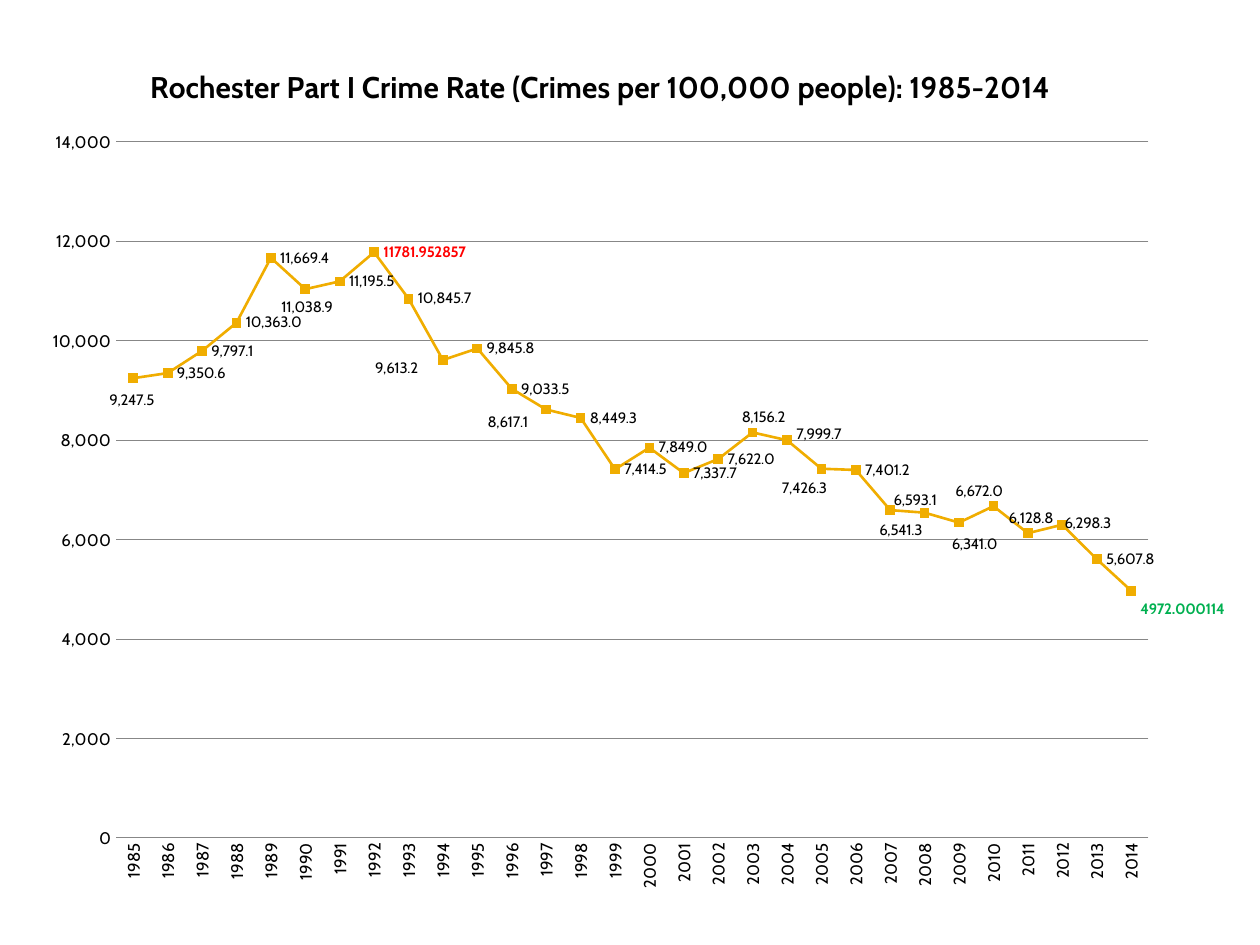
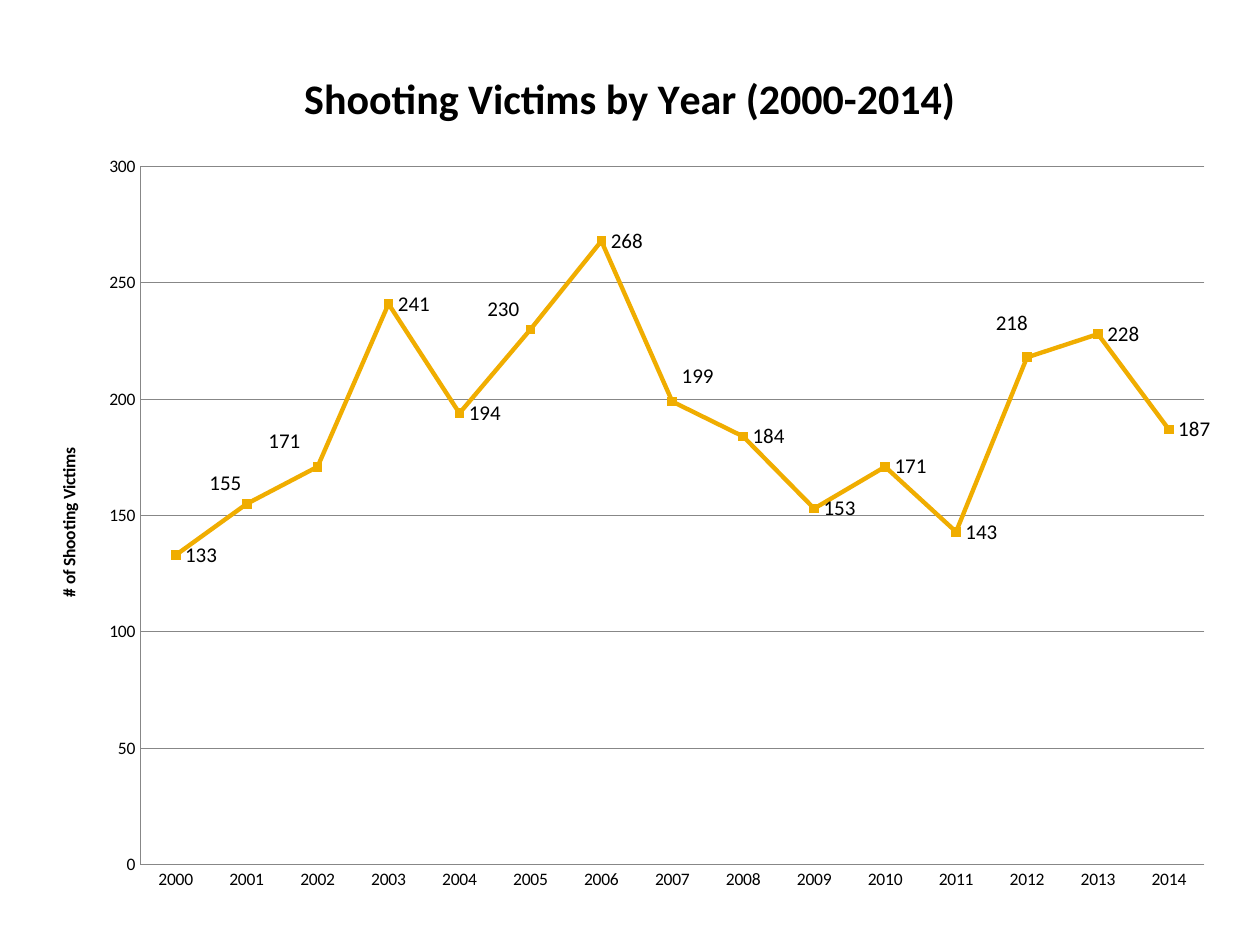
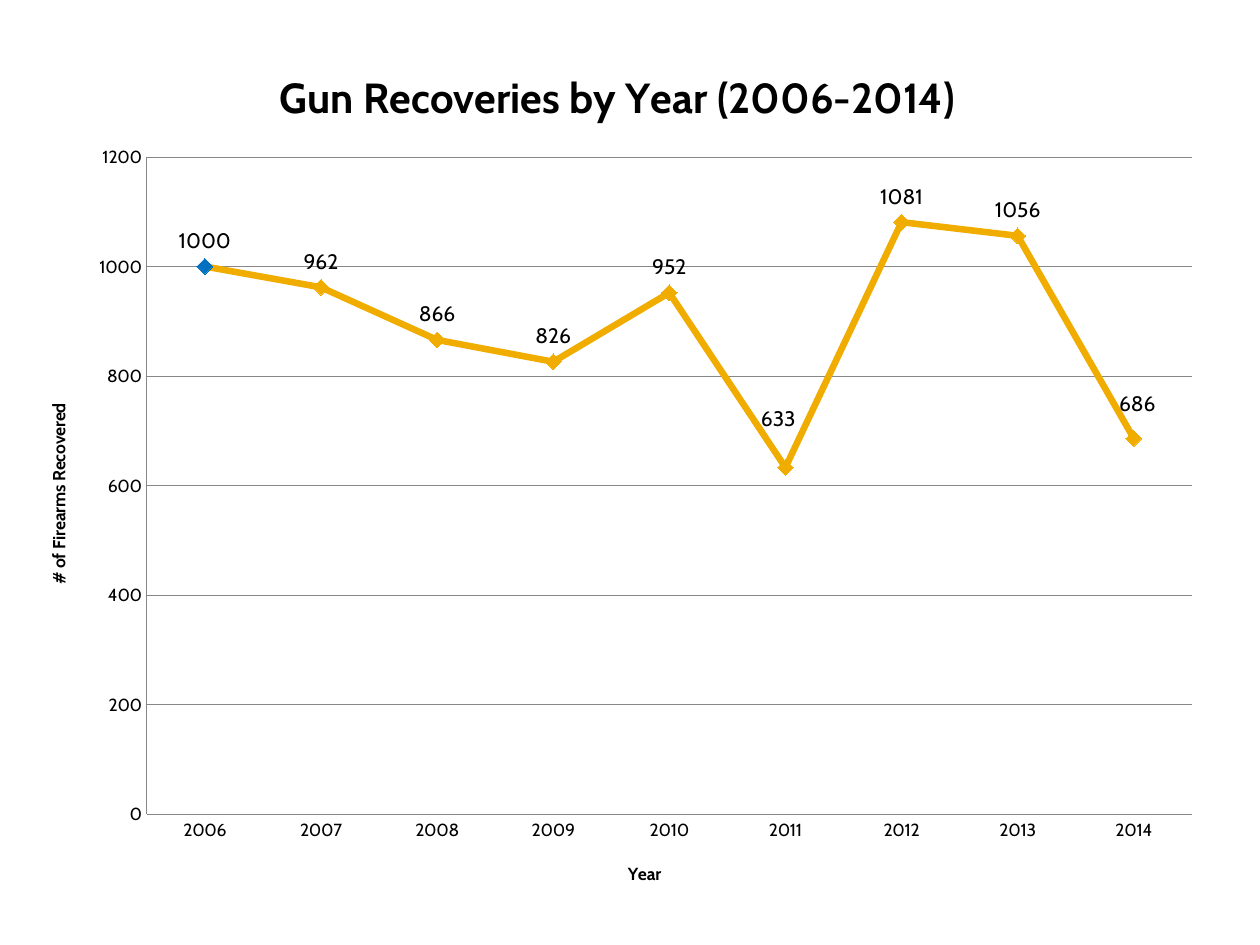
from dataclasses import dataclass, field

from pptx import Presentation
from pptx.chart.data import CategoryChartData
from pptx.dml.color import RGBColor
from pptx.enum.chart import XL_CHART_TYPE, XL_LABEL_POSITION, XL_MARKER_STYLE, XL_TICK_MARK
from pptx.oxml import parse_xml
from pptx.oxml.ns import nsdecls, qn
from pptx.util import Inches, Pt

LINE_MARKERS = XL_CHART_TYPE.LINE_MARKERS
RIGHT = XL_LABEL_POSITION.RIGHT
ABOVE = XL_LABEL_POSITION.ABOVE
SQUARE = XL_MARKER_STYLE.SQUARE
DIAMOND = XL_MARKER_STYLE.DIAMOND
NO_TICKS = XL_TICK_MARK.NONE

BLACK = RGBColor(0x00, 0x00, 0x00)
GREY = RGBColor(0x87, 0x87, 0x87)
GOLD = RGBColor(0xF0, 0xAD, 0x00)
RED = RGBColor(0xFF, 0x00, 0x00)
GREEN = RGBColor(0x00, 0xB0, 0x50)
BLUE = RGBColor(0x00, 0x70, 0xC0)

SLIDE_WIDTH, SLIDE_HEIGHT = Inches(10), Inches(7.5)
RULE_WIDTH = Pt(0.5)
BLANK_LAYOUT = 6


@dataclass
class TrendChart:
    """Positions, plot box and label shifts are percentages of the chart box."""

    box: tuple
    title: str
    title_size: float
    title_at: tuple
    plot_box: tuple
    first_year: int
    values: list
    top_value: int
    step: int
    font: str
    label_size: float
    line_width: float
    label_shifts: dict
    axis_size: float = 10
    label_position: object = RIGHT
    marker: object = SQUARE
    marker_size: int = 5
    label_format: str = "General"
    axis_format: str = "General"
    value_title: tuple = ()
    category_title: tuple = ()
    vertical_years: bool = False
    value_line: bool = True
    highlighted_labels: dict = field(default_factory=dict)
    highlighted_markers: dict = field(default_factory=dict)


CRIME_RATE = TrendChart(
    box=(0.27, 0.31, 9.47, 6.87),
    title="Rochester Part I Crime Rate (Crimes per 100,000 people): 1985-2014",
    title_size=17.1,
    title_at=(9.3, 2.5),
    plot_box=(6.9, 11.9, 86.8, 80.4),
    first_year=1985,
    values=[
        9247.5, 9350.6, 9797.1, 10363.0, 11669.4, 11038.9, 11195.5, 11782.0,
        10845.7, 9613.2, 9845.8, 9033.5, 8617.1, 8449.3, 7414.5, 7849.0,
        7337.7, 7622.0, 8156.2, 7999.7, 7426.3, 7401.2, 6593.1, 6541.3,
        6341.0, 6672.0, 6128.8, 6298.3, 5607.8, 4972.0,
    ],
    top_value=14000,
    step=2000,
    font="Cabin",
    axis_size=9.6,
    label_size=8.6,
    line_width=1.5,
    label_format="#,##0.0",
    axis_format="#,##0",
    vertical_years=True,
    value_line=False,
    label_shifts={
        1985: (-2.8, 2.5), 1990: (-2.8, 2.1), 1994: (-6.5, 1.0), 1997: (-5.7, 1.5),
        2003: (-1.7, -1.8), 2004: (0, -0.7), 2005: (-4.1, 2.3), 2007: (-0.5, -1.2),
        2008: (-4.6, 2.0), 2009: (-1.4, 2.5), 2010: (-4.0, -1.7), 2011: (-2.4, -1.7),
        2012: (-0.6, -0.2), 2014: (0, 2.2),
    },
    highlighted_labels={1992: ("11781.952857", RED), 2014: ("4972.000114", GREEN)},
)

SHOOTING_VICTIMS = TrendChart(
    box=(0.26, 0.31, 9.48, 6.89),
    title="Shooting Victims by Year (2000-2014)",
    title_size=24,
    title_at=(22.1, 2.7),
    plot_box=(9.0, 14.7, 89.1, 80.4),
    first_year=2000,
    values=[133, 155, 171, 241, 194, 230, 268, 199, 184, 153, 171, 143, 218, 228, 187],
    top_value=300,
    step=50,
    font="Calibri",
    label_size=12,
    line_width=2.5,
    value_title=("# of Shooting Victims", (1.8, 46.7)),
    label_shifts={
        2001: (-3.9, -2.4), 2002: (-4.9, -2.9), 2005: (-4.4, -2.3),
        2007: (0, -2.9), 2012: (-3.4, -3.9),
    },
)

GUN_RECOVERIES = TrendChart(
    box=(0.17, 0.33, 9.48, 6.89),
    title="Gun Recoveries by Year (2006-2014)",
    title_size=24,
    title_at=(21.0, 2.2),
    plot_box=(10.5, 13.3, 87.5, 75.7),
    first_year=2006,
    values=[1000, 962, 866, 826, 952, 633, 1081, 1056, 686],
    top_value=1200,
    step=200,
    font="Cabin",
    label_size=12,
    line_width=3.75,
    label_position=ABOVE,
    marker=DIAMOND,
    marker_size=9,
    value_title=("# of Firearms Recovered", (1.8, 41.3)),
    category_title=("Year", (50.5, 94.1)),
    label_shifts={2011: (-0.6, -2.6), 2014: (0.3, -1.0)},
    highlighted_markers={2006: BLUE},
)


def style_font(font, name, size, color=BLACK, bold=False):
    font.name = name
    font.size = Pt(size)
    font.bold = bold
    font.color.rgb = color


def style_line(line, color, width):
    line.color.rgb = color
    line.width = width


def set_layout(parent, index, percentages, modes=()):
    for layout in parent.findall(qn("c:layout")):
        parent.remove(layout)
    settings = "".join(f'<c:{name} val="{value}"/>' for name, value in modes)
    settings += "".join(
        f'<c:{name} val="{share / 100:.3f}"/>' for name, share in zip("xywh", percentages)
    )
    parent.insert(index, parse_xml(
        f'<c:layout {nsdecls("c")}><c:manualLayout>{settings}</c:manualLayout></c:layout>'
    ))


def place_title(title, text, position, font, size):
    title.text_frame.text = text
    style_font(title.text_frame.paragraphs[0].runs[0].font, font, size, bold=True)
    set_layout(title._element, 1, position, [("xMode", "edge"), ("yMode", "edge")])


def style_axis(axis, trend, title, has_line=True):
    axis.major_tick_mark = NO_TICKS
    axis.minor_tick_mark = NO_TICKS
    style_font(axis.tick_labels.font, trend.font, trend.axis_size)
    if has_line:
        style_line(axis.format.line, GREY, RULE_WIDTH)
    else:
        axis.format.line.fill.background()
    axis.has_title = bool(title)
    if title:
        place_title(axis.axis_title, *title, trend.font, trend.axis_size)


def style_axes(chart, trend):
    years = chart.category_axis
    style_axis(years, trend, trend.category_title)
    if trend.vertical_years:
        years._element.xpath("c:txPr/a:bodyPr")[0].set("rot", "-5400000")
    amounts = chart.value_axis
    style_axis(amounts, trend, trend.value_title, trend.value_line)
    amounts.minimum_scale = 0
    amounts.maximum_scale = trend.top_value
    amounts.major_unit = trend.step
    amounts.tick_labels.number_format = trend.axis_format
    amounts.tick_labels.number_format_is_linked = False
    amounts.has_major_gridlines = True
    style_line(amounts.major_gridlines.format.line, GREY, RULE_WIDTH)


def style_marker(marker, trend, color):
    marker.style = trend.marker
    marker.size = trend.marker_size
    marker.format.fill.solid()
    marker.format.fill.fore_color.rgb = color
    marker.format.line.color.rgb = color


def style_series(series, trend):
    series.smooth = False
    style_line(series.format.line, GOLD, Pt(trend.line_width))
    style_marker(series.marker, trend, GOLD)
    for year, color in trend.highlighted_markers.items():
        point = series.points[year - trend.first_year]
        style_marker(point.marker, trend, color)
        style_line(point.format.line, color, Pt(trend.line_width))


def style_labels(series, trend):
    labels = series.data_labels
    labels.show_value = True
    labels.position = trend.label_position
    labels.number_format = trend.label_format
    labels.number_format_is_linked = False
    style_font(labels.font, trend.font, trend.label_size)
    for year in sorted({*trend.label_shifts, *trend.highlighted_labels}):
        index = year - trend.first_year
        label = series.points[index].data_label
        if year in trend.highlighted_labels:
            text, color = trend.highlighted_labels[year]
            label.text_frame.text = text
            run = label.text_frame.paragraphs[0].runs[0]
            style_font(run.font, trend.font, trend.label_size, color, True)
        else:
            style_font(label.font, trend.font, trend.label_size)
        label.position = trend.label_position
        if year in trend.label_shifts:
            element = series._element.xpath(f'c:dLbls/c:dLbl[c:idx/@val="{index}"]')[0]
            set_layout(element, 1, trend.label_shifts[year])
    for leader_lines in series._element.xpath("c:dLbls/c:showLeaderLines"):
        leader_lines.set("val", "0")


def add_trend_slide(presentation, trend):
    slide = presentation.slides.add_slide(presentation.slide_layouts[BLANK_LAYOUT])
    data = CategoryChartData(number_format=trend.label_format)
    data.categories = [str(trend.first_year + index) for index in range(len(trend.values))]
    data.add_series("Series 1", trend.values)
    box = [Inches(length) for length in trend.box]
    chart = slide.shapes.add_chart(LINE_MARKERS, *box, data).chart
    style_font(chart.font, trend.font, trend.axis_size)
    chart.has_legend = False
    chart.has_title = True
    place_title(chart.chart_title, trend.title, trend.title_at, trend.font, trend.title_size)
    plot = chart.plots[0]
    plot.vary_by_categories = False
    style_axes(chart, trend)
    style_series(plot.series[0], trend)
    style_labels(plot.series[0], trend)
    set_layout(
        chart._element.xpath("c:chart/c:plotArea")[0], 0, trend.plot_box,
        [("layoutTarget", "inner"), ("xMode", "edge"), ("yMode", "edge")],
    )


def main():
    presentation = Presentation()
    presentation.slide_width = SLIDE_WIDTH
    presentation.slide_height = SLIDE_HEIGHT
    for trend in (CRIME_RATE, SHOOTING_VICTIMS, GUN_RECOVERIES):
        add_trend_slide(presentation, trend)
    presentation.save("out.pptx")


if __name__ == "__main__":
    main()
